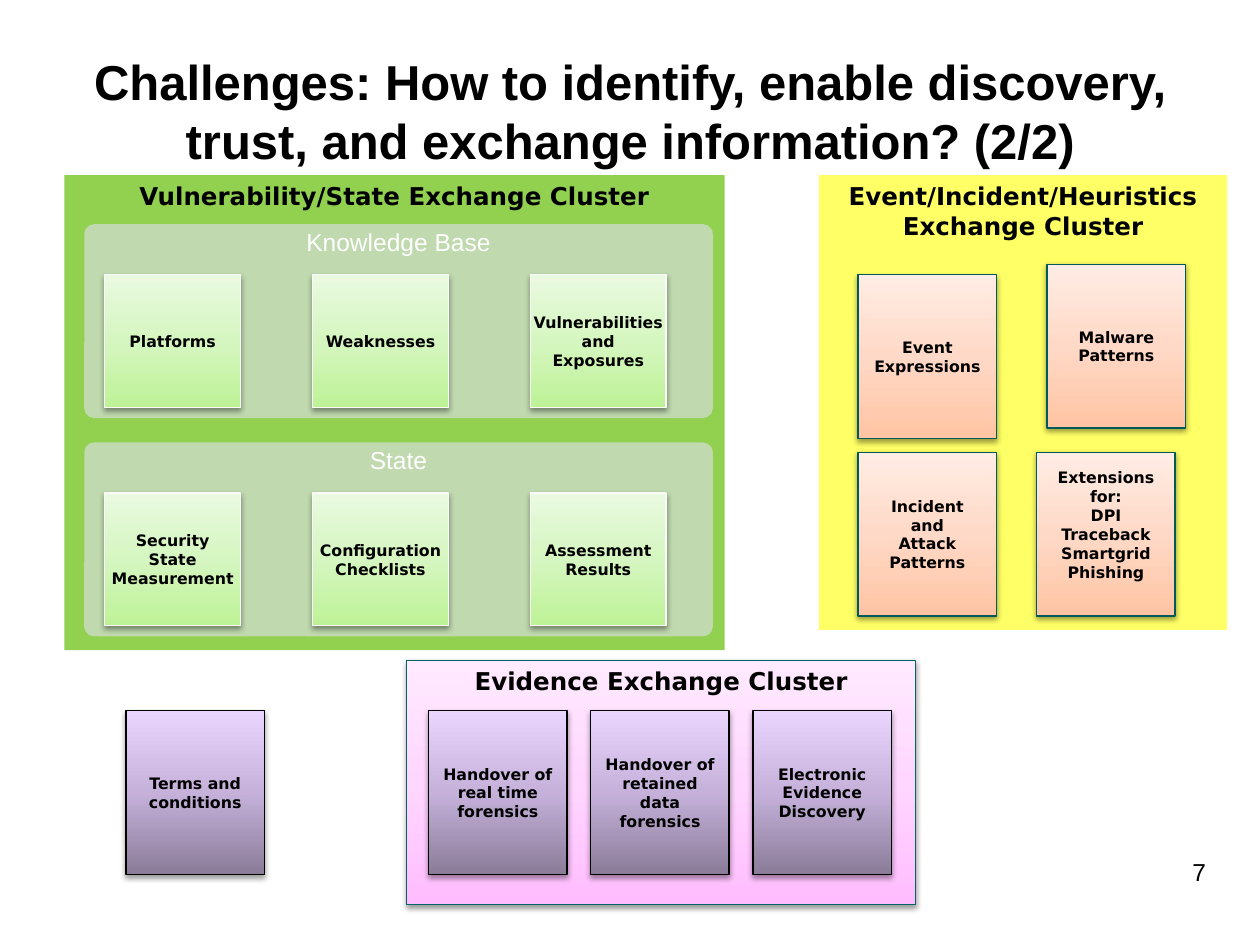
import copy

from lxml import etree
from pptx import Presentation
from pptx import util as u
from pptx.dml.color import RGBColor
from pptx.enum import shapes, text
from pptx.oxml import ns

COLOURS = {
    "black": "000000", "white": "FFFFFF",
    "vulnerability": "92D050", "incident": "FFFF66", "group": "C0D9AF",
    "teal": "006464", "dark teal": "005A5A", "pale": "F9F9F9",
}
# Gradient stops from bottom to top
GRADIENTS = {
    "pink": ("FFBDFF", "FFD6FF", "FFEAFF"),
    "purple": ("8B7C99", "C5B1DA", "EAD5FF"),
    "orange": ("FFC4A3", "FFD9C7", "FFECE4"),
    "green": ("BEF297", "D5F6C0", "EAFAE0"),
}
RECTANGLE = shapes.MSO_SHAPE.RECTANGLE
ROUNDED = shapes.MSO_SHAPE.ROUNDED_RECTANGLE

presentation = Presentation()
presentation.slide_width = u.Cm(25.4)
presentation.slide_height = u.Cm(19.05)
slide = presentation.slides.add_slide(presentation.slide_layouts[6])


def write(shape, wording, size, font="DejaVu Sans", colour="black", bold=True,
          align=text.PP_ALIGN.CENTER, anchor=text.MSO_ANCHOR.TOP, wrap=True):
    frame = shape.text_frame
    frame.text = wording
    frame.word_wrap = wrap
    frame.vertical_anchor = anchor
    for paragraph in frame.paragraphs:
        paragraph.alignment = align
        for run in paragraph.runs:
            run.font.name = font
            run.font.size = u.Pt(size)
            run.font.bold = bold
            run.font.color.rgb = RGBColor.from_string(COLOURS[colour])


def add_box(kind, left, top, width, height, fill, line=None):
    """Add a flat box, or a shadowed one if fill names a gradient."""
    shape = slide.shapes.add_shape(kind, u.Cm(left), u.Cm(top), u.Cm(width), u.Cm(height))
    shape.shadow.inherit = False
    if line:
        shape.line.color.rgb = RGBColor.from_string(COLOURS[line])
        shape.line.width = u.Pt(0.75)
    else:
        shape.line.fill.background()
    if fill not in GRADIENTS:
        shape.fill.solid()
        shape.fill.fore_color.rgb = RGBColor.from_string(COLOURS[fill])
        return shape

    shape.fill.gradient()
    shape.fill.gradient_angle = 90
    stop_list = shape.element.spPr.find(".//" + ns.qn("a:gsLst"))
    stop_list.insert(1, copy.deepcopy(stop_list[0]))
    for stop, position, colour in zip(shape.fill.gradient_stops, (0, 0.5, 1), GRADIENTS[fill]):
        stop.position = position
        stop.color.rgb = RGBColor.from_string(colour)

    effects = shape.element.spPr.find(ns.qn("a:effectLst"))
    shadow = etree.SubElement(effects, ns.qn("a:outerShdw"), blurRad="40000",
                              dist="20000", dir="5400000", rotWithShape="0")
    shadow_colour = etree.SubElement(shadow, ns.qn("a:srgbClr"), val=COLOURS["black"])
    etree.SubElement(shadow_colour, ns.qn("a:alpha"), val="38000")
    return shape


# Cluster panels
clusters = [
    ("Vulnerability/State Exchange Cluster", 1.3, 3.53, 13.31, 9.58, "vulnerability", None),
    ("Event/Incident/Heuristics Exchange Cluster", 16.51, 3.53, 8.23, 9.17, "incident", None),
    ("Evidence Exchange Cluster", 8.2, 13.31, 10.26, 4.93, "pink", "teal"),
]
for heading, *place in clusters:
    write(add_box(RECTANGLE, *place), heading, 14)

title = slide.shapes.add_textbox(u.Cm(1.3), u.Cm(1.32), u.Cm(22.81), u.Cm(1.8))
write(title, "Challenges: How to identify, enable discovery, trust, and exchange information? (2/2)",
      28, font="Arial", anchor=text.MSO_ANCHOR.MIDDLE)

# Vulnerability and state groups, three tiles each
groups = [
    ("Knowledge Base", 4.52, ["Platforms", "Weaknesses", "Vulnerabilities\vand\vExposures"]),
    ("State", 8.92, ["Security\vState\vMeasurement", "Configuration\vChecklists",
                     "Assessment\vResults"]),
]
for heading, top, labels in groups:
    group = add_box(ROUNDED, 1.7, top, 12.67, 3.91, "group")
    group.adjustments[0] = 0.05
    group.text_frame.margin_top = 0
    write(group, heading, 14, font="Arial", colour="white", bold=False)
    for label, left in zip(labels, (2.11, 6.3, 10.69)):
        tile = add_box(RECTANGLE, left, top + 1.02, 2.74, 2.67, "green", "pale")
        write(tile, label, 9, anchor=text.MSO_ANCHOR.MIDDLE, wrap=False)

# Incident and evidence tiles
tiles = [
    ("Event\vExpressions", 17.3, 5.54, "orange", "dark teal"),
    ("Malware\vPatterns", 21.11, 5.33, "orange", "dark teal"),
    ("Incident\vand\vAttack\vPatterns", 17.3, 9.12, "orange", "dark teal"),
    ("Extensions\vfor:\nDPI\nTraceback\nSmartgrid\nPhishing", 20.9, 9.12, "orange", "dark teal"),
    ("Terms and\vconditions", 2.54, 14.33, "purple", "black"),
]
evidence = ["Handover of real time forensics", "Handover of retained data forensics",
            "Electronic\vEvidence Discovery"]
for column, label in enumerate(evidence):
    tiles.append((label, 8.64 + 3.27 * column, 14.33, "purple", "black"))

for label, left, top, fill, line in tiles:
    tile = add_box(RECTANGLE, left, top, 2.79, 3.3, fill, line)
    write(tile, label, 9, anchor=text.MSO_ANCHOR.MIDDLE)
    if label.startswith("Extensions"):
        tile.text_frame.margin_left = tile.text_frame.margin_right = 0
        tile.text_frame.margin_bottom = u.Cm(0.5)
    elif fill == "orange":
        tile.text_frame.word_wrap = False

page_number = slide.shapes.add_textbox(u.Cm(18.21), u.Cm(17.15), u.Cm(6.35), u.Cm(1.32))
write(page_number, "7", 14, font="Arial", bold=False, align=text.PP_ALIGN.RIGHT)

presentation.save("out.pptx")
